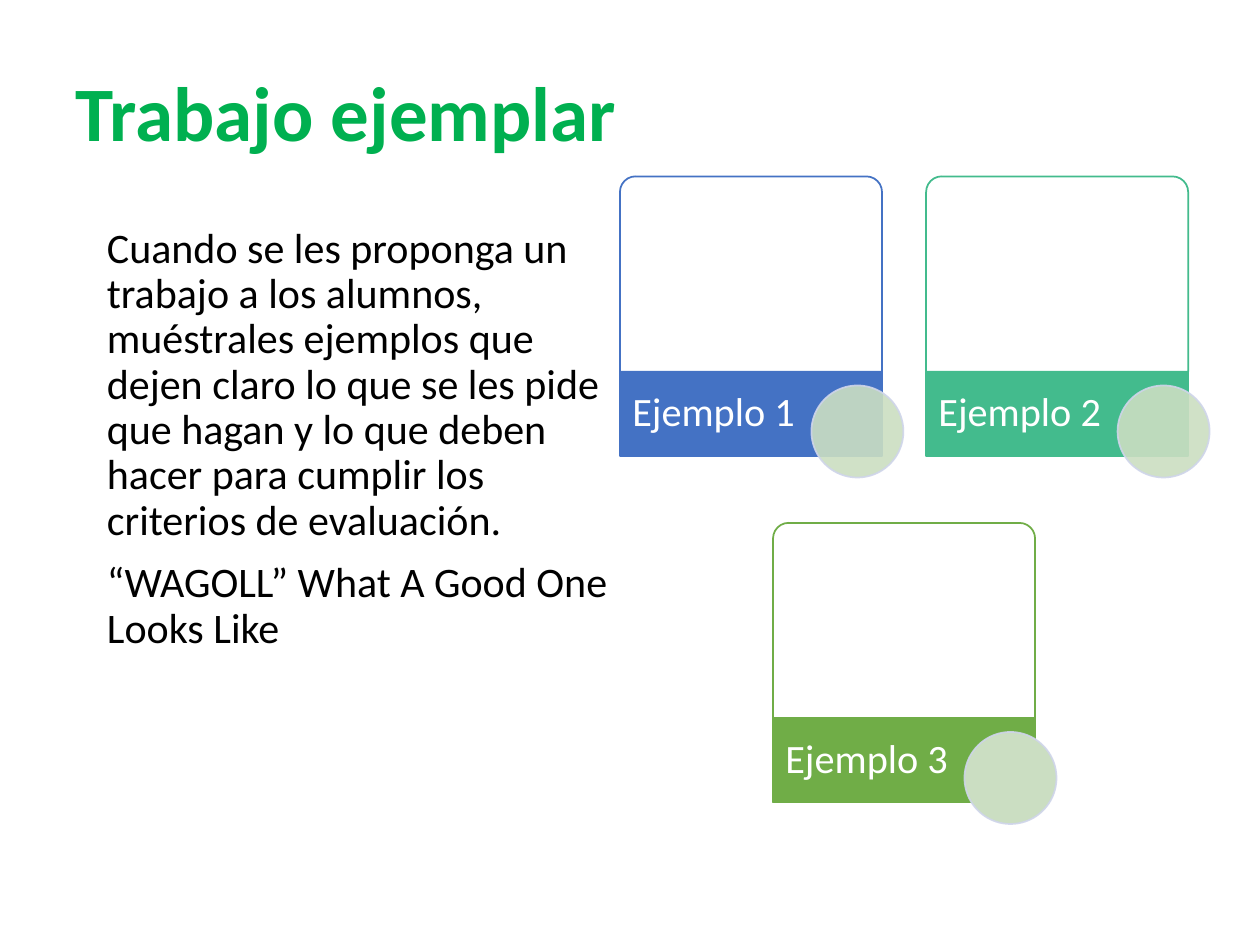
"""Build the slide on exemplary work with three example cards."""
from lxml import etree
from pptx import Presentation
from pptx.dml.color import RGBColor
from pptx.enum.shapes import MSO_SHAPE
from pptx.enum.text import MSO_ANCHOR
from pptx.oxml.ns import qn
from pptx.util import Inches, Pt

ROUNDED = MSO_SHAPE.ROUND_2_SAME_RECTANGLE
RECTANGLE = MSO_SHAPE.RECTANGLE
OVAL = MSO_SHAPE.OVAL
MIDDLE = MSO_ANCHOR.MIDDLE

COLORS = {
    "title": "00B050", "body": "000000", "white": "FFFFFF",
    "blue": "4472C4", "teal": "43BB8D", "green": "70AD47",
    "badge": "CBDEC2", "badge_line": "CFD5EA",
}
COLUMN, ROW = 2.43, 2.75
CARD_LEFT, CARD_TOP = 4.92, 1.4
CARD_WIDTH, FRAME_HEIGHT, LABEL_HEIGHT = 2.08, 1.55, 0.67
LABEL_WIDTH, BADGE_SIZE = 1.47, 0.73


def add_text(bounds, paragraphs, size, color, bold=False):
    box = page.shapes.add_textbox(*map(Inches, bounds))
    frame = box.text_frame
    frame.word_wrap = True
    for index, text in enumerate(paragraphs):
        para = frame.add_paragraph() if index else frame.paragraphs[0]
        para.line_spacing = 0.9
        span = para.add_run()
        span.text = text
        span.font.name = "Calibri"
        span.font.size = Pt(size)
        span.font.bold = bold
        span.font.color.rgb = RGBColor.from_string(COLORS[color])
    return frame


def add_panel(kind, bounds, fill, line, fill_alpha=100, line_alpha=100):
    panel = page.shapes.add_shape(kind, *map(Inches, bounds))
    panel.shadow.inherit = False
    panel.fill.solid()
    panel.fill.fore_color.rgb = RGBColor.from_string(COLORS[fill])
    panel.line.color.rgb = RGBColor.from_string(COLORS[line])
    panel.line.width = Pt(1)
    properties = panel.fill._xPr
    outline = properties.find(qn("a:ln"))
    for parent, alpha in ((properties, fill_alpha), (outline, line_alpha)):
        if alpha < 100:
            tint = parent.find(qn("a:solidFill"))[0]
            etree.SubElement(tint, qn("a:alpha")).set("val", str(alpha * 1000))
    return panel


deck = Presentation()
deck.slide_width, deck.slide_height = Inches(10), Inches(7.5)
page = deck.slides.add_slide(deck.slide_layouts[6])

title = add_text((0.5, 0.3, 9, 1.25), ["Trabajo ejemplar"], 44, "title", True)
title.vertical_anchor = MIDDLE

body = add_text((0.5, 1.75, 4.42, 4.95), [
    "Cuando se les proponga un trabajo a los alumnos, muéstrales ejemplos que "
    "dejen claro lo que se les pide que hagan y lo que deben hacer para cumplir "
    "los criterios de evaluación.",
    "“WAGOLL” What A Good One Looks Like",
], 24, "body")
for para in body.paragraphs:
    para.space_before = Pt(10)
    para._p.get_or_add_pPr().set("marL", str(Inches(0.25)))

cards = [
    ("Ejemplo 1", "blue", 0, 0, 90),
    ("Ejemplo 2", "teal", 1, 0, 90),
    ("Ejemplo 3", "green", 0.5, 1, 100),
]
for name, color, column, row, badge_alpha in cards:
    left = CARD_LEFT + column * COLUMN
    top = CARD_TOP + row * ROW
    label_top = top + FRAME_HEIGHT
    card = add_panel(ROUNDED, (left, top, CARD_WIDTH, FRAME_HEIGHT), "white", color, 90)
    card.adjustments[0] = 0.08
    card.adjustments[1] = 0
    add_panel(RECTANGLE, (left, label_top, CARD_WIDTH, LABEL_HEIGHT), color, color)
    label = add_text((left, label_top, LABEL_WIDTH, LABEL_HEIGHT), [name], 23, "white")
    label.vertical_anchor = MIDDLE
    label.margin_left, label.margin_right = Inches(0.1), Inches(0.03)
    label.margin_top = label.margin_bottom = 0
    badge = (left + 1.52, label_top + 0.11, BADGE_SIZE, BADGE_SIZE)
    add_panel(OVAL, badge, "badge", "badge_line", badge_alpha, 90)

deck.save("out.pptx")
